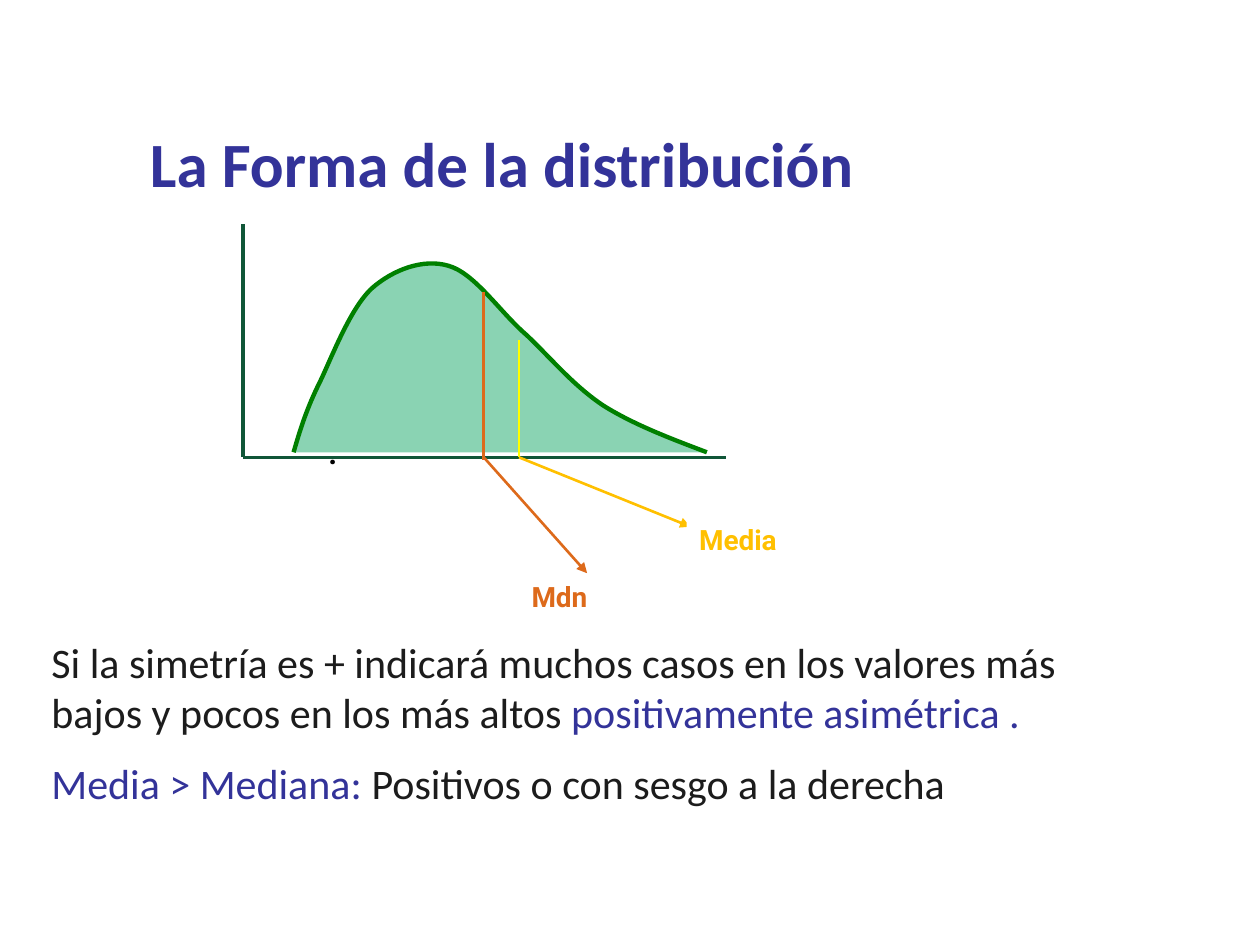
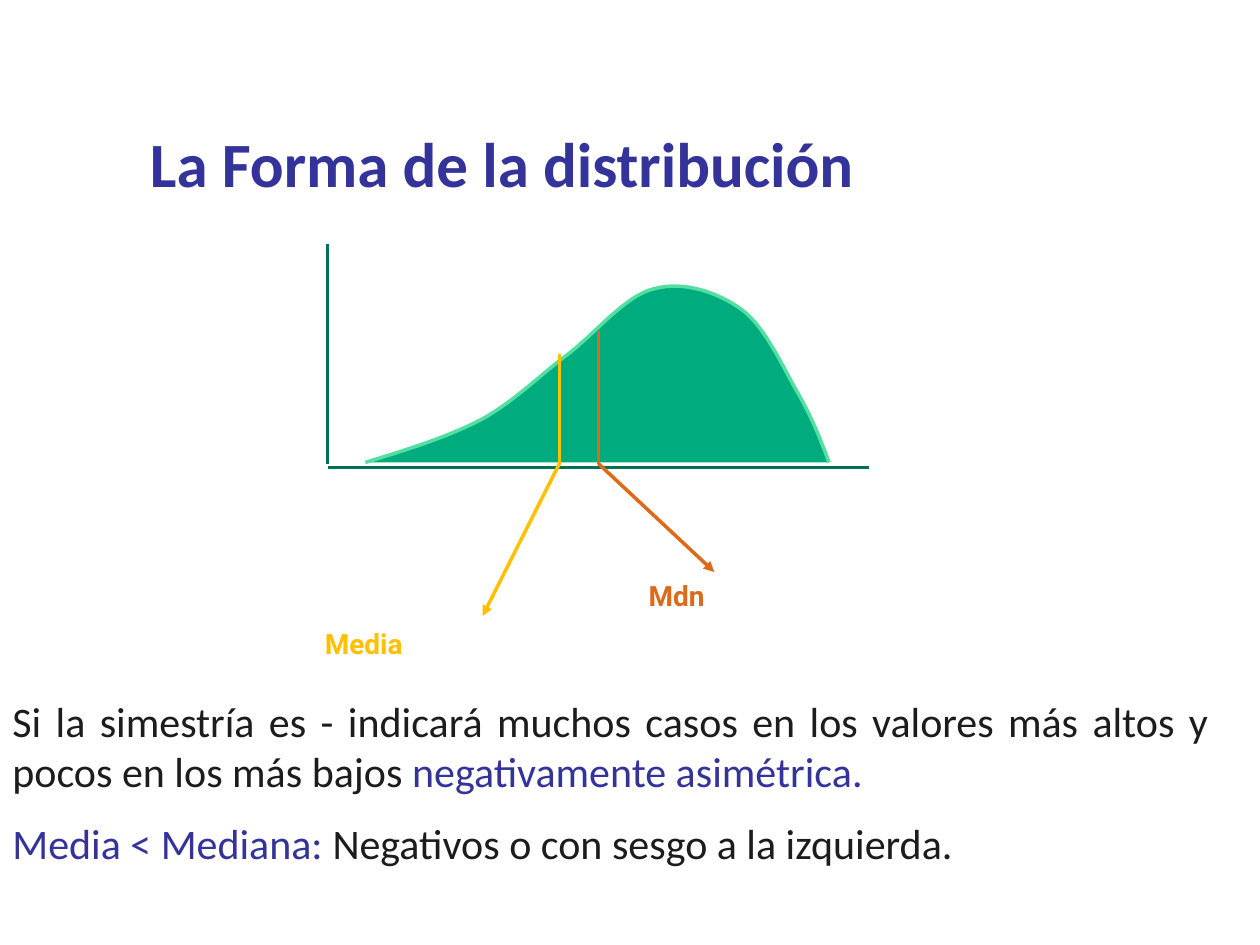
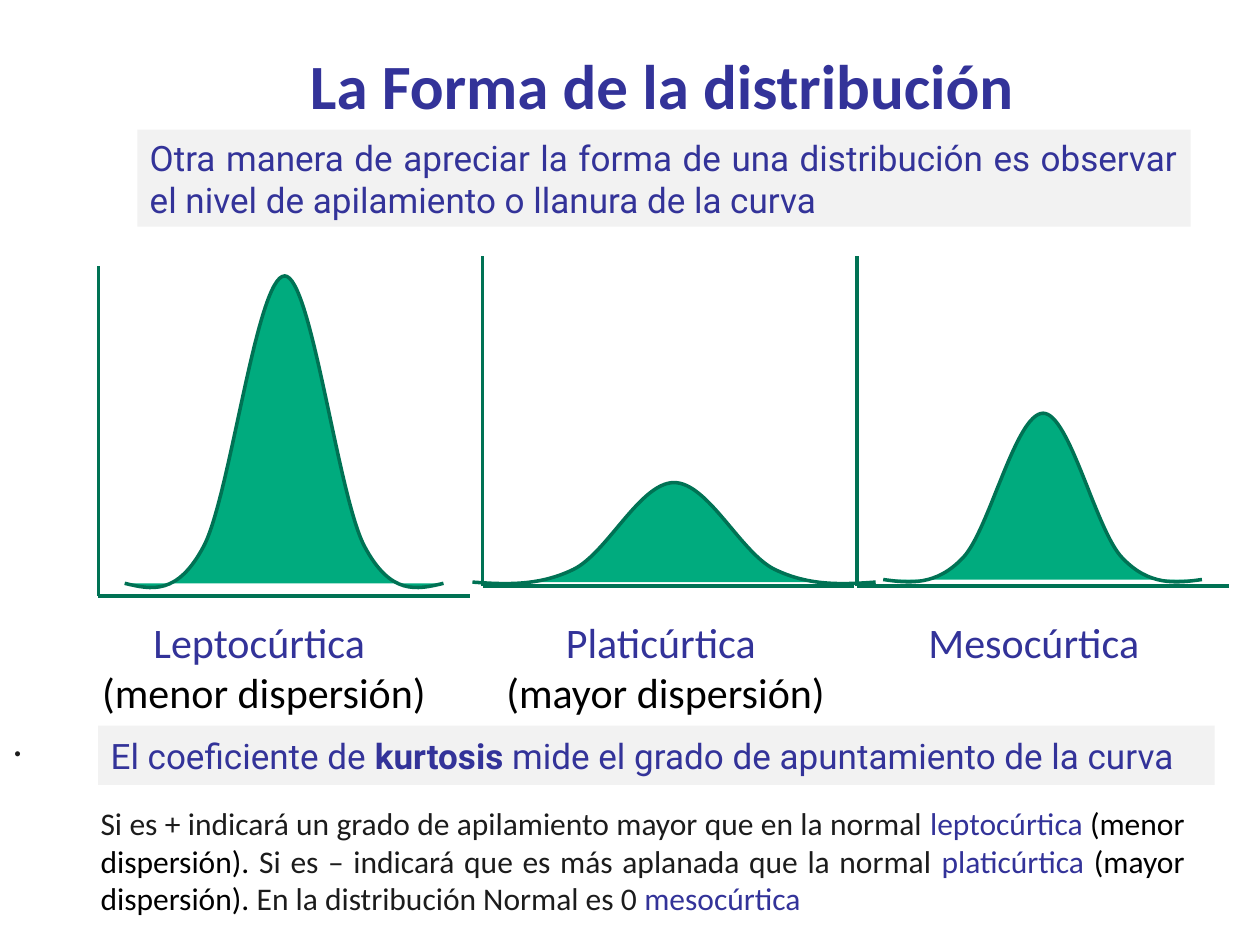
from dataclasses import dataclass

from lxml import etree
from pptx import Presentation
from pptx.dml.color import RGBColor
from pptx.enum import shapes, text
from pptx.oxml.ns import qn
from pptx.util import Emu, Pt

PX = 9144  # EMU per px, 100 px to the inch
TITLE_ONLY = 5
TITLE = "La Forma de la distribución"
BODY_FONT, LABEL_FONT = "Calibri", "Roboto"
COLORS = {
    "white": "FFFFFF", "black": "000000", "ink": "1C1C1C", "blue": "333399",
    "band": "F2F2F2", "green": "00AB7E", "axis": "007254", "mint": "54DFA2",
    "pine": "105638", "leaf": "20AC6F", "outline": "008000",
    "median": "DD6A1B", "mean": "FFC000", "yellow": "FFFF00",
}
LEFT, CENTER, JUSTIFY = (text.PP_ALIGN.LEFT, text.PP_ALIGN.CENTER,
                         text.PP_ALIGN.JUSTIFY)
Point = tuple[int, int]


@dataclass
class Span:
    words: str
    color: str = "ink"
    bold: bool = False


@dataclass
class Block:
    frame: tuple[int, int, int, int]
    paras: list[list[Span]]
    size: int = 24
    font: str = BODY_FONT
    align: text.PP_ALIGN = LEFT
    gap: int = 12
    fill: str | None = None
    anchor: text.MSO_ANCHOR = text.MSO_ANCHOR.TOP
    wrap: bool = True


@dataclass
class Stroke:
    start: Point
    end: Point
    color: str
    width: float = 2
    arrow: bool = False


@dataclass
class Curve:
    points: list[Point]  # start, then three points for each Bézier piece
    fill: str = "green"
    line: str = "axis"
    width: float = 2
    opacity: int = 100


@dataclass
class Bell:
    axis: Point  # corner where the axes meet
    left: int
    width: int
    heights: list[int]  # left half, foot to peak


def rgb(name: str) -> RGBColor:
    return RGBColor.from_string(COLORS[name])


def emu(*lengths: int) -> list[Emu]:
    return [Emu(length * PX) for length in lengths]


# Drawing functions
def write(box, block: Block) -> None:
    frame = box.text_frame
    frame.word_wrap = block.wrap
    frame.auto_size = text.MSO_AUTO_SIZE.NONE
    frame.vertical_anchor = block.anchor
    for index, spans in enumerate(block.paras):
        para = frame.add_paragraph() if index else frame.paragraphs[0]
        para.alignment = block.align
        para.space_before = Pt(block.gap if index else 0)
        for span in spans:
            run = para.add_run()
            run.text = span.words
            run.font.name, run.font.size = block.font, Pt(block.size)
            run.font.bold = span.bold
            run.font.color.rgb = rgb(span.color)


def draw_block(page, block: Block) -> None:
    if block.fill:
        box = page.shapes.add_shape(shapes.MSO_SHAPE.RECTANGLE, *emu(*block.frame))
        box.shadow.inherit = False
        box.fill.solid()
        box.fill.fore_color.rgb = rgb(block.fill)
        box.line.fill.background()
    else:
        box = page.shapes.add_textbox(*emu(*block.frame))
    write(box, block)


def draw_stroke(page, stroke: Stroke) -> None:
    line = page.shapes.add_connector(shapes.MSO_CONNECTOR.STRAIGHT,
                                     *emu(*stroke.start, *stroke.end))
    line.line.color.rgb = rgb(stroke.color)
    line.line.width = Pt(stroke.width)
    if stroke.arrow:
        etree.SubElement(line.line._get_or_add_ln(), qn("a:tailEnd"), type="triangle")
    etree.SubElement(line._element.spPr, qn("a:effectLst"))


def draw_curve(page, curve: Curve) -> None:
    builder = page.shapes.build_freeform(*curve.points[0], scale=PX)
    builder.add_line_segments(curve.points[1:], close=False)
    shape = builder.convert_to_shape()
    # Join every three straight segments into one Bézier piece
    segments = list(shape._element.iter(qn("a:lnTo")))
    for first in range(0, len(segments), 3):
        trio = segments[first:first + 3]
        piece = etree.Element(qn("a:cubicBezTo"))
        trio[0].addprevious(piece)
        for segment in trio:
            piece.append(segment[0])
            segment.getparent().remove(segment)
    shape.shadow.inherit = False
    shape.fill.solid()
    shape.fill.fore_color.rgb = rgb(curve.fill)
    if curve.opacity < 100:
        color = next(shape._element.spPr.iter(qn("a:srgbClr")))
        etree.SubElement(color, qn("a:alpha"), val=str(curve.opacity * 1000))
    shape.line.color.rgb = rgb(curve.line)
    shape.line.width = Pt(curve.width)


def draw_bell(page, bell: Bell) -> None:
    x, y = bell.axis
    for end in ((x, y - 262), (x + 295, y)):
        draw_stroke(page, Stroke((x, y), end, "axis"))
    levels = bell.heights + bell.heights[-2::-1]
    step = bell.width / (len(levels) - 1)
    draw_curve(page, Curve([(round(bell.left + i * step), level)
                            for i, level in enumerate(levels)]))


def draw(page, *items) -> None:
    drawers = {Block: draw_block, Stroke: draw_stroke, Curve: draw_curve,
               Bell: draw_bell}
    for item in items:
        drawers[type(item)](page, item)


def add_page(deck, left: int, top: int):
    page = deck.slides.add_slide(deck.slide_layouts[TITLE_ONLY])
    title = page.shapes.title
    title.left, title.top, title.width, title.height = emu(left, top, 588, 71)
    write(title, Block((left, top, 588, 71), [[Span(TITLE, "blue", True)]], 36))
    return page


def label(words: str, color: str, *frame: int) -> Block:
    return Block(frame, [[Span(words, color, True)]], 16, LABEL_FONT, fill="white")


# Slides
def positive_skew(deck) -> None:
    page = add_page(deck, 109, 94)
    draw(
        page,
        Stroke((193, 178), (193, 363), "pine"),
        Stroke((193, 363), (576, 363), "pine"),
        Curve([(561, 359), (532, 348), (503, 337), (479, 322), (455, 306),
               (438, 285), (418, 266), (397, 248), (377, 217), (356, 211),
               (336, 205), (312, 214), (295, 229), (278, 245), (264, 282),
               (254, 303), (243, 325), (238, 342), (233, 359)],
              "leaf", "outline", 2.5, 52),
        Stroke((412, 270), (412, 363), "yellow", 1.5),
        Stroke((384, 232), (384, 365), "median", 1.5),
        Stroke((384, 363), (466, 455), "median", 1.5, True),
        label("Mdn", "median", 412, 455, 191, 55),
        Stroke((412, 363), (548, 418), "mean", 1.5, True),
        label("Media", "mean", 545, 410, 191, 55),
        Block((31, 500, 891, 273), [
            [Span("Si la simetría es + indicará muchos casos en los valores más "
                  "bajos y pocos en los más altos "),
             Span("positivamente asimétrica .", "blue")],
            [Span("Media > Mediana: ", "blue"),
             Span("Positivos o con sesgo a la derecha")]]),
        Block((250, 330, 500, 51), [[Span(".", "black")]], font=LABEL_FONT),
    )


def negative_skew(deck) -> None:
    page = add_page(deck, 109, 94)
    draw(
        page,
        Stroke((260, 194), (260, 368), "axis"),
        Stroke((260, 371), (690, 371), "axis"),
        Curve([(290, 367), (323, 357), (355, 347), (382, 333), (409, 318),
               (428, 298), (451, 281), (474, 263), (497, 234), (520, 229),
               (543, 223), (570, 232), (589, 246), (608, 260), (623, 295),
               (635, 315), (646, 335), (652, 351), (658, 367)],
              line="mint"),
        Stroke((444, 281), (444, 368), "mean"),
        Stroke((475, 263), (475, 368), "median"),
        Stroke((475, 368), (567, 454), "median", arrow=True),
        label("Mdn", "median", 505, 454, 215, 52),
        Stroke((444, 368), (383, 489), "mean", arrow=True),
        label("Media", "mean", 248, 492, 215, 52),
        Block((0, 547, 969, 222), [
            [Span("Si la simestría es - indicará muchos casos en los valores más "
                  "altos y pocos en los más bajos "),
             Span("negativamente asimétrica. ", "blue")],
            [Span("Media < Mediana: ", "blue"),
             Span("Negativos o con sesgo a la izquierda.")]], align=JUSTIFY),
    )


def kurtosis(deck) -> None:
    page = add_page(deck, 236, 32)
    middle = text.MSO_ANCHOR.MIDDLE
    draw(
        page,
        Block((0, 562, 100, 51), [[Span(".")]]),
        Bell((383, 465), 375, 320, [462, 464, 465, 452, 439, 383, 383]),
        Bell((680, 465), 701, 253, [460, 463, 465, 443, 422, 328, 328]),
        Bell((78, 473), 99, 253, [463, 468, 473, 433, 392, 219, 219]),
        # Curve names
        Block((70, 484, 279, 91), [[Span("Leptocúrtica ", "blue")],
                                   [Span("(menor dispersión)", "black")]],
              align=CENTER, gap=0, wrap=False),
        Block((383, 484, 283, 91), [[Span("Platicúrtica", "blue")],
                                    [Span(" (mayor dispersión)", "black")]],
              align=CENTER, gap=0, wrap=False),
        Block((727, 484, 189, 51), [[Span("Mesocúrtica", "blue")]], wrap=False),
        # Shaded statements
        Block((109, 103, 836, 77), [
            [Span("Otra manera de apreciar la forma de una distribución es "
                  "observar el nivel de apilamiento o llanura de la curva", "blue")]],
              20, LABEL_FONT, JUSTIFY, fill="band", anchor=middle),
        Block((78, 576, 886, 47), [
            [Span("El coeficiente de ", "blue"), Span("kurtosis ", "blue", True),
             Span("mide el grado de apuntamiento de la curva", "blue")]],
              20, LABEL_FONT, fill="band", anchor=middle),
        Block((70, 633, 880, 101), [
            [Span("Si es + indicará un grado de apilamiento mayor que en la normal "),
             Span("leptocúrtica ", "blue"), Span("(menor dispersión). ", "black"),
             Span("Si es – indicará que es más aplanada que la normal "),
             Span("platicúrtica ", "blue"), Span("(mayor dispersión). ", "black"),
             Span("En la distribución Normal es 0 "),
             Span("mesocúrtica", "blue")]], 18, align=JUSTIFY),
    )


def main() -> None:
    deck = Presentation()
    deck.slide_width, deck.slide_height = emu(1000, 750)
    for build in (positive_skew, negative_skew, kurtosis):
        build(deck)
    deck.save("out.pptx")


if __name__ == "__main__":
    main()
